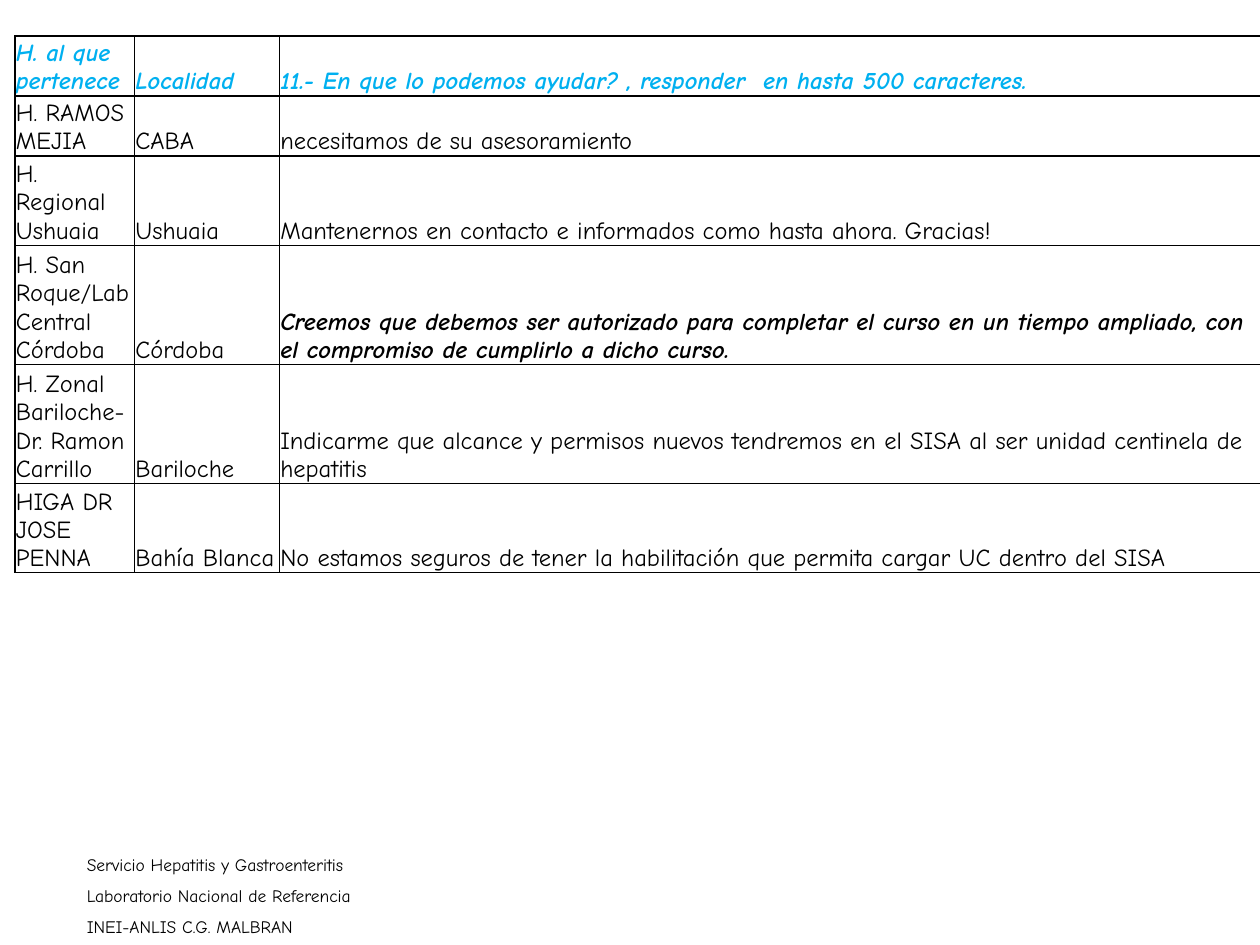
import pptx
import pptx.dml.color
import pptx.enum.text
import pptx.oxml
import pptx.oxml.ns
import pptx.util

Cm = pptx.util.Cm
Pt = pptx.util.Pt

HEADER = ["H. al que pertenece", "Localidad",
          "11.- En que lo podemos ayudar? , responder  en hasta 500 caracteres."]
ANSWERS = [
    ["H. RAMOS MEJIA", "CABA", "necesitamos de su asesoramiento"],
    ["H. Regional Ushuaia", "Ushuaia",
     "Mantenernos en contacto e informados como hasta ahora. Gracias!"],
    ["H. San Roque/Lab Central Córdoba", "Córdoba",
     "Creemos que debemos ser autorizado para completar el curso en un tiempo ampliado, "
     "con el compromiso de cumplirlo a dicho curso."],
    ["H. Zonal Bariloche- Dr. Ramon Carrillo", "Bariloche",
     "Indicarme que alcance y permisos nuevos tendremos en el SISA al ser unidad centinela "
     "de hepatitis"],
    ["HIGA DR JOSE PENNA", "Bahía Blanca",
     "No estamos seguros de tener la habilitación que permita cargar UC dentro del SISA"],
]
EMPHASIZED_CELL = (3, 2)
COLUMN_WIDTHS = [2.41, 2.92, 19.79]
ROW_HEIGHTS = [1.2, 1.2, 1.8, 2.4, 2.4, 1.8]
FOOTER = ["Servicio Hepatitis y Gastroenteritis", "Laboratorio Nacional de Referencia",
          "INEI-ANLIS C.G. MALBRAN"]


def color(value):
    """Turn a hex string into a colour."""
    return pptx.dml.color.RGBColor.from_string(value)


class SlideBuilder:
    """Hold the style and the current slide."""

    font_name = "Comic Neue"
    text_color = "000000"
    header_color = "00B0F0"
    border_color = "000000"

    def __init__(self, slide):
        """Start building on the given slide."""
        self.slide = slide

    def format_runs(self, paragraph, size, text_color, emphasized=False):
        """Apply the font to every run of a paragraph."""
        for run in paragraph.runs:
            run.font.name = self.font_name
            run.font.size = Pt(size)
            run.font.bold = run.font.italic = emphasized
            run.font.color.rgb = color(text_color)

    def add_borders(self, cell):
        """Draw a thin line on all four sides of a cell."""
        properties = cell._tc.get_or_add_tcPr()
        for side in ("lnL", "lnR", "lnT", "lnB"):
            properties.append(pptx.oxml.parse_xml(
                f'<a:{side} {pptx.oxml.ns.nsdecls("a")} w="{Pt(1)}"><a:solidFill>'
                f'<a:srgbClr val="{self.border_color}"/></a:solidFill></a:{side}>'))

    def fill_cell(self, cell, text, text_color, emphasized):
        """Write and style one table cell."""
        cell.text_frame.text = text
        cell.vertical_anchor = pptx.enum.text.MSO_ANCHOR.BOTTOM
        cell.margin_left = cell.margin_right = cell.margin_top = Cm(0.02)
        cell.margin_bottom = 0
        self.add_borders(cell)
        cell.fill.background()
        self.format_runs(cell.text_frame.paragraphs[0], 14, text_color, emphasized)

    def add_table(self, left, top, rows, widths, heights):
        """Add a bordered table whose first row is the header."""
        table = self.slide.shapes.add_table(
            len(rows), len(widths), Cm(left), Cm(top),
            Cm(sum(widths)), Cm(sum(heights))).table
        table.horz_banding = False
        for column, width in zip(table.columns, widths):
            column.width = Cm(width)
        for row_index, (texts, height) in enumerate(zip(rows, heights)):
            table.rows[row_index].height = Cm(height)
            is_header = row_index == 0
            for column_index, text in enumerate(texts):
                self.fill_cell(
                    table.cell(row_index, column_index), text,
                    self.header_color if is_header else self.text_color,
                    is_header or (row_index, column_index) == EMPHASIZED_CELL)

    def add_text(self, left, top, width, height, lines):
        """Add a text box with one paragraph per line."""
        shape = self.slide.shapes.add_textbox(Cm(left), Cm(top), Cm(width), Cm(height))
        text_frame = shape.text_frame
        text_frame.word_wrap = True
        text_frame.text = "\n".join(lines)
        for index, paragraph in enumerate(text_frame.paragraphs):
            if index:
                paragraph.space_before = Pt(5.5)
            self.format_runs(paragraph, 10, self.text_color)


def main():
    """Build and save the presentation."""
    presentation = pptx.Presentation()
    presentation.slide_width = Cm(25.4)
    presentation.slide_height = Cm(19.05)
    builder = SlideBuilder(presentation.slides.add_slide(presentation.slide_layouts[6]))
    builder.add_text(1.5, 17.1, 8.9, 1.95, FOOTER)
    builder.add_table(0.3, 0.73, [HEADER] + ANSWERS, COLUMN_WIDTHS, ROW_HEIGHTS)
    presentation.save("out.pptx")


if __name__ == "__main__":
    main()
